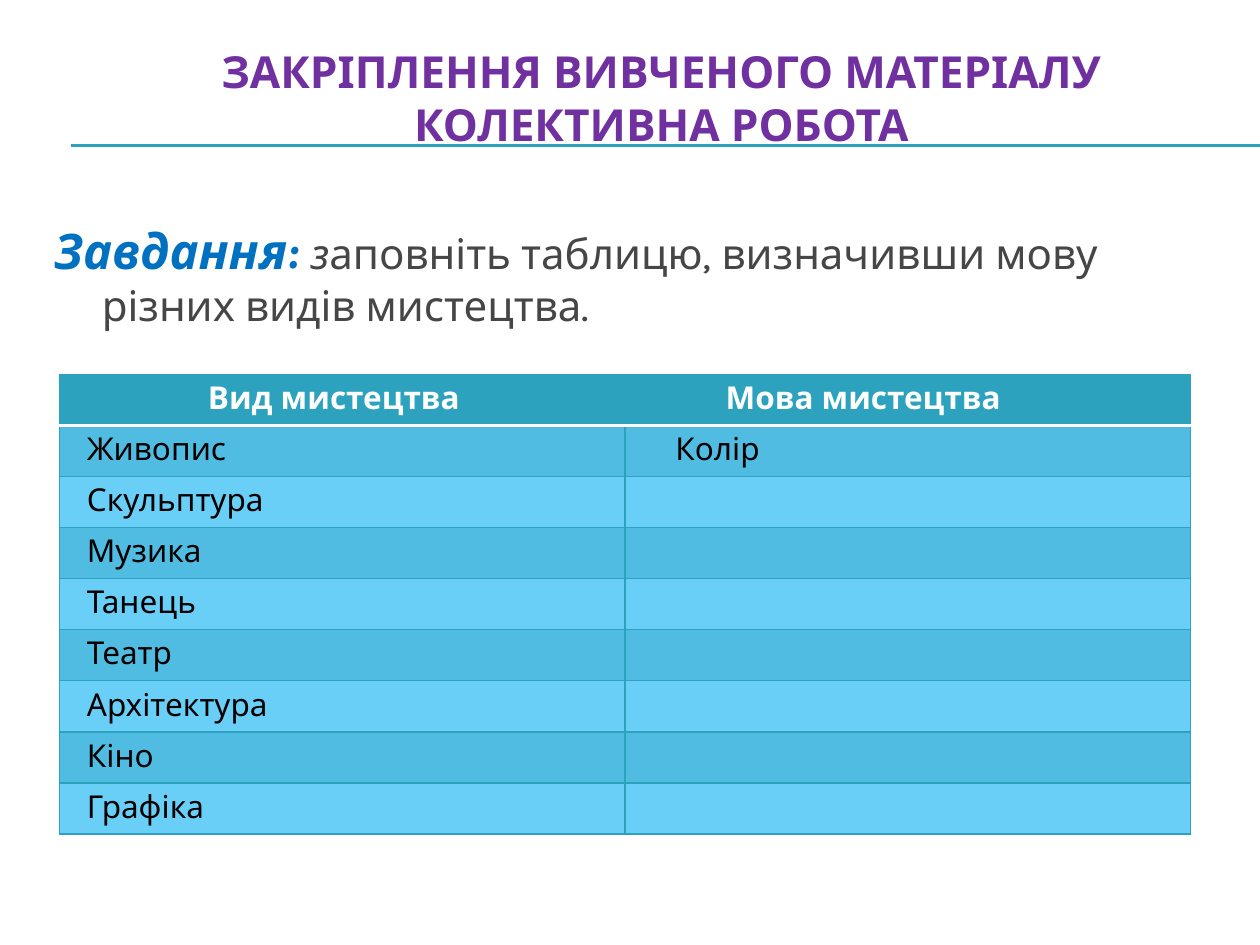
"""Build a slide with a task and a table of art forms and their languages."""
from dataclasses import dataclass, field

import pptx
import pptx.dml.color
import pptx.enum.text
import pptx.enum.shapes
import pptx.oxml
import pptx.oxml.ns
import pptx.util

Inches = pptx.util.Inches
Pt = pptx.util.Pt
FONT = "Karla"
TEAL, WHITE, BLACK, GREY = "2DA2BF", "FFFFFF", "000000", "464646"
BANDS = ("51BCE1", "69CFF7")
ARTS = ("Живопис", "Скульптура", "Музика", "Танець", "Театр",
        "Архітектура", "Кіно", "Графіка")


@dataclass
class Run:
    text: str
    color: str
    fmt: dict = field(default_factory=dict)


@dataclass
class Cell:
    text: str
    fill: str
    color: str
    indent: float
    bold: bool
    edges: dict


def rgb(value: str) -> pptx.dml.color.RGBColor:
    return pptx.dml.color.RGBColor.from_string(value)


def add_runs(p, runs: list[Run]) -> None:
    for run in runs:
        r = p.add_run()
        r.text = run.text
        r.font.color.rgb = rgb(run.color)
        for name, value in {"name": FONT, **run.fmt}.items():
            setattr(r.font, name, value)


def add_text(s, left: float, top: float, width: float, height: float):
    sp = s.shapes.add_textbox(*map(Inches, (left, top, width, height)))
    sp.text_frame.word_wrap = True
    return sp.text_frame


def add_rule(s, y: float) -> None:
    sp = s.shapes.add_connector(pptx.enum.shapes.MSO_CONNECTOR.STRAIGHT,
                                Inches(0.56), Inches(y), Inches(10), Inches(y))
    sp.line.color.rgb = rgb(TEAL)
    sp.line.width = Pt(0.75)
    sp._element.spPr.append(pptx.oxml.parse_xml(
        f"<a:effectLst {pptx.oxml.ns.nsdecls('a')}/>"))


def add_edge(tc_pr, side: str, color: str, width: float) -> None:
    tc_pr.append(pptx.oxml.parse_xml(
        f'<a:ln{side} {pptx.oxml.ns.nsdecls("a")} w="{Pt(width)}"><a:solidFill>'
        f'<a:srgbClr val="{color}"/></a:solidFill></a:ln{side}>'))


def fill_cell(tc, cell: Cell) -> None:
    tc_pr = tc._tc.get_or_add_tcPr()
    for side in "LRTB":
        add_edge(tc_pr, side, *cell.edges.get(side, (TEAL, 0.79)))
    tc.fill.solid()
    tc.fill.fore_color.rgb = rgb(cell.fill)
    tc.margin_left = Inches(cell.indent)
    if cell.text:
        add_runs(tc.text_frame.paragraphs[0],
                 [Run(cell.text, cell.color, {"size": Pt(18), "bold": cell.bold})])


def add_art_table(s) -> None:
    rows = [("Вид мистецтва", "Мова мистецтва"), (ARTS[0], "Колір")]
    rows += [(art, "") for art in ARTS[1:]]
    table = s.shapes.add_table(len(rows), 2, Inches(0.47), Inches(2.97),
                               Inches(8.98), Inches(3.65)).table
    divider = (WHITE, 2)
    for i, row in enumerate(rows):
        head = i == 0
        edges = {"B": divider} if head else {"T": divider} if i == 1 else {}
        indents = (1.18, 0.8) if head else (0.22, 0.4)
        fill = TEAL if head else BANDS[(i - 1) % 2]
        for j, text in enumerate(row):
            fill_cell(table.cell(i, j), Cell(text, fill, WHITE if head else BLACK,
                                             indents[j], head, edges))


def main() -> None:
    prs = pptx.Presentation()
    prs.slide_width, prs.slide_height = Inches(10), Inches(7.5)
    s = prs.slides.add_slide(prs.slide_layouts[6])
    for y in (1.15, 1.16):
        add_rule(s, y)

    tf = add_text(s, 0.5, 0.31, 9.5, 0.92)
    tf.vertical_anchor = pptx.enum.text.MSO_ANCHOR.MIDDLE
    p = tf.paragraphs[0]
    p.alignment = pptx.enum.text.PP_ALIGN.CENTER
    title = {"size": Pt(25.2), "bold": True}
    add_runs(p, [Run("ЗАКРІПЛЕННЯ ВИВЧЕНОГО МАТЕРІАЛУ", "7030A0", title)])
    p.add_line_break()
    add_runs(p, [Run("КОЛЕКТИВНА РОБОТА", "7030A0", title)])

    p = add_text(s, 0.33, 1.7, 9.5, 4.95).paragraphs[0]
    p.space_before = Pt(5)
    p_pr = p._p.get_or_add_pPr()
    for name, value in {"marL": 0.38, "indent": -0.38}.items():
        p_pr.set(name, str(Inches(value)))
    add_runs(p, [
        Run("Завдання: ", "0070C0", {"size": Pt(28), "bold": True, "italic": True}),
        Run("з", GREY, {"size": Pt(24), "italic": True}),
        Run("аповніть таблицю, визначивши мову різних видів мистецтва.", GREY,
            {"size": Pt(24)})])

    add_art_table(s)
    prs.save("out.pptx")


if __name__ == "__main__":
    main()
